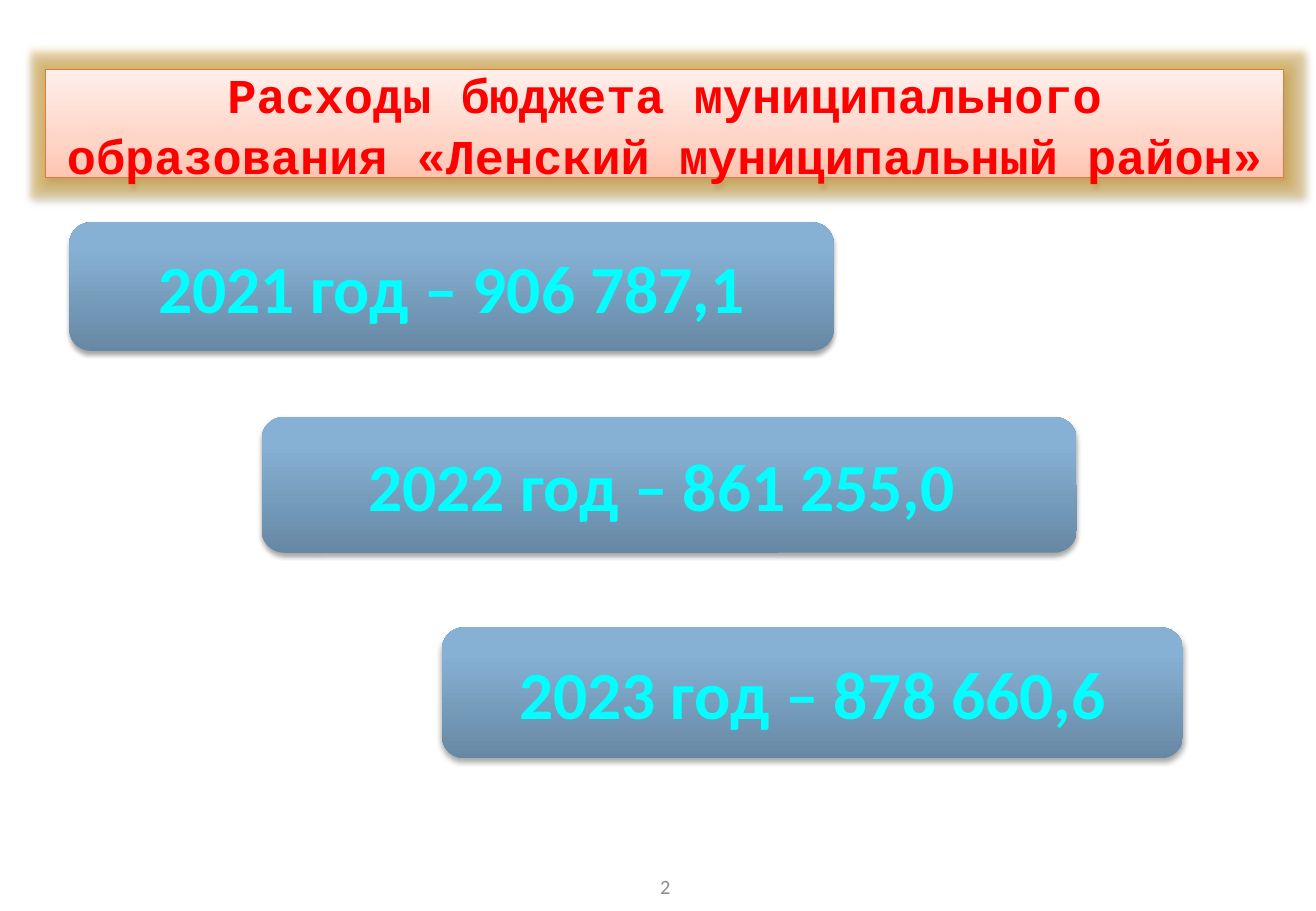
"""Build the slide of district budget spending by year."""
import lxml.etree
import pptx
import pptx.dml.color
import pptx.enum.shapes
import pptx.enum.text
import pptx.oxml.ns
import pptx.util

Cm = pptx.util.Cm
Pt = pptx.util.Pt
RGBColor = pptx.dml.color.RGBColor
Shapes = pptx.enum.shapes.MSO_SHAPE
qn = pptx.oxml.ns.qn

RED = RGBColor(0xFF, 0x00, 0x00)
CYAN = RGBColor(0x00, 0xFF, 0xFF)
GREY = RGBColor(0x8C, 0x8C, 0x8C)
ORANGE = RGBColor(0xDC, 0x7C, 0x42)
GOLD = RGBColor(0xDC, 0xAA, 0x40)
BLACK = RGBColor(0x00, 0x00, 0x00)
PEACH_STOPS = (
    (0, RGBColor(0xFF, 0xC5, 0xB1)),
    (35, RGBColor(0xFF, 0xD5, 0xC8)),
    (100, RGBColor(0xFF, 0xEF, 0xEA)),
)
BLUE_STOPS = (
    (0, RGBColor(0x67, 0x88, 0xA4)),
    (80, RGBColor(0x86, 0xB1, 0xD4)),
    (100, RGBColor(0x86, 0xB2, 0xD7)),
)

YEARS = (
    ("2021 год – 906 787,1", (1.45, 4.65, 15.98, 2.69)),
    ("2022 год – 861 255,0 ", (5.47, 8.72, 17.04, 2.84)),
    ("2023 год – 878 660,6", (9.24, 13.12, 15.49, 2.74)),
)


def write_text(shape, text, size, color, font="Calibri", bold=False, wrap=True, spacing=None):
    frame = shape.text_frame
    frame.word_wrap = wrap
    frame.vertical_anchor = pptx.enum.text.MSO_ANCHOR.MIDDLE
    paragraph = frame.paragraphs[0]
    paragraph.alignment = pptx.enum.text.PP_ALIGN.CENTER
    if spacing:
        paragraph.line_spacing = spacing
    run = paragraph.add_run()
    run.text = text
    run.font.name = font
    run.font.size = Pt(size)
    run.font.bold = bold
    run.font.color.rgb = color


def add_color(parent, color, alpha=None):
    element = lxml.etree.SubElement(parent, qn("a:srgbClr"), val=str(color))
    if alpha:
        lxml.etree.SubElement(element, qn("a:alpha"), val=str(alpha * 1000))


class BudgetSlide:
    """Hold the current slide and add its styled elements."""

    def __init__(self, presentation):
        self.slide = presentation.slides.add_slide(presentation.slide_layouts[6])

    def panel(self, kind, box, stops, shadow_alpha, shadow_distance, line=None, glow=None):
        shape = self.slide.shapes.add_shape(kind, *map(Cm, box))
        shape.shadow.inherit = False
        shape.fill.gradient()
        shape.fill.gradient_angle = 90
        properties = shape.element.spPr
        stop_list = properties.find(".//" + qn("a:gsLst"))
        for stop in list(stop_list):
            stop_list.remove(stop)
        for position, color in stops:
            stop = lxml.etree.SubElement(stop_list, qn("a:gs"), pos=str(position * 1000))
            add_color(stop, color)
        if line:
            shape.line.color.rgb = line
            shape.line.width = Pt(0.75)
        else:
            shape.line.fill.background()
        effects = properties.find(qn("a:effectLst"))
        if glow:
            halo = lxml.etree.SubElement(effects, qn("a:glow"), rad=str(Pt(8)))
            add_color(halo, glow, 40)
        shadow = lxml.etree.SubElement(
            effects, qn("a:outerShdw"), blurRad=str(Pt(3.1)),
            dist=str(Pt(shadow_distance)), dir="5400000", rotWithShape="0")
        add_color(shadow, BLACK, shadow_alpha)
        return shape

    def title(self, text):
        shape = self.panel(Shapes.RECTANGLE, (0.96, 1.45, 25.88, 2.26),
                           PEACH_STOPS, 38, 1.6, ORANGE, GOLD)
        write_text(shape, text, 28.8, RED, font="Courier New", bold=True, spacing=1.04)

    def year(self, text, box):
        shape = self.panel(Shapes.ROUNDED_RECTANGLE, box, BLUE_STOPS, 35, 1.8)
        write_text(shape, text, 40, CYAN, bold=True, wrap=False)

    def page_number(self, text):
        shape = self.slide.shapes.add_textbox(*map(Cm, (9.55, 18.03, 8.71, 1.02)))
        write_text(shape, text, 12, GREY)


def main():
    presentation = pptx.Presentation()
    presentation.slide_width = Cm(27.51)
    presentation.slide_height = Cm(19.05)
    budget = BudgetSlide(presentation)
    budget.title("Расходы бюджета муниципального образования «Ленский муниципальный район»")
    for text, box in YEARS:
        budget.year(text, box)
    budget.page_number("2")
    presentation.save("out.pptx")


if __name__ == "__main__":
    main()
